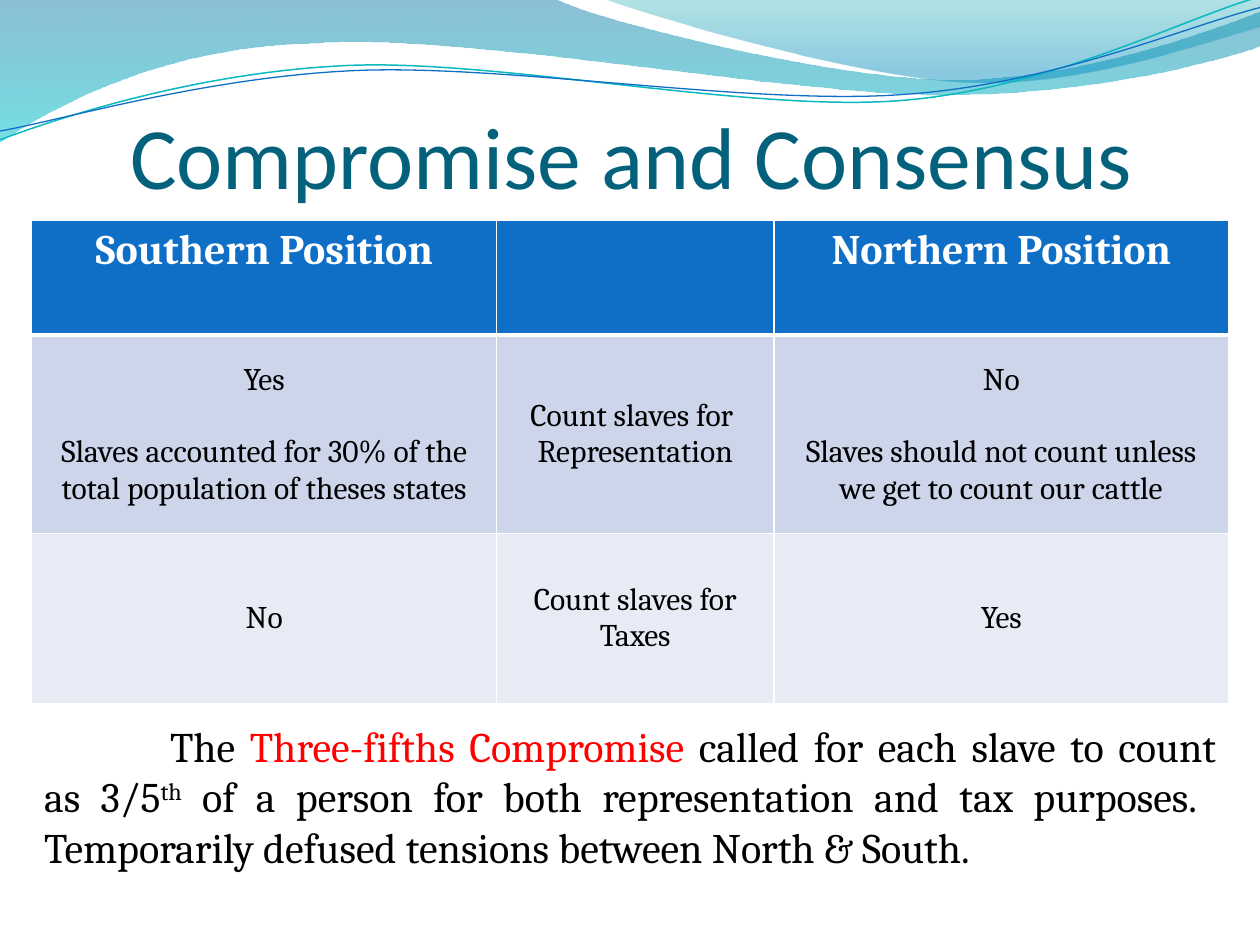
import pptx
import pptx.util
import pptx.dml.color
import pptx.enum.text
from lxml import etree
from pptx.oxml.ns import qn

Cm, Pt = pptx.util.Cm, pptx.util.Pt
ALIGN, ANCHOR = pptx.enum.text.PP_ALIGN, pptx.enum.text.MSO_ANCHOR
COLORS = {
    "title": "04617B", "header": "0F6FC6", "band1": "CCD5EA", "band2": "E7EBF5",
    "white": "FFFFFF", "text": "000000", "accent": "FF0000", "teal": "0AB8BF",
    "deep": "0074A1", "aqua": "00C6CF", "sea": "00A1A9", "sky": "008BBF",
}
UNIT = Cm(0.0254)
BACK_WAVE = [
    (0, 0), (440, -1), (476, 17, 664, 63, 758, 63), (853, 63, 958, 26, 1000, 9),
    (1001, 36), (983, 44, 870, 76, 746, 75), (622, 75, 382, 28, 257, 34),
    (129, 36, 46, 83, -1, 113), (0, 0),
]
FRONT_WAVE = [
    (479, -1), (509, 11, 682, 62, 769, 65), (856, 69, 961, 32, 1000, 21),
    (1000, 0), (479, -1),
]
TEAL_LINE = [
    (0, 111), (48, 93, 158, 57, 277, 52), (395, 47, 593, 89, 713, 80),
    (833, 71, 938, 15, 998, -2),
]
BLUE_LINE = [
    (0, 104), (47, 96, 164, 61, 283, 56), (403, 51, 597, 84, 717, 75),
    (836, 67, 941, 21, 1000, 6),
]
ROWS = [
    [["Southern Position"], [], ["Northern Position"]],
    [["Yes", "Slaves accounted for 30% of the total population of theses states"],
     ["Count slaves for  Representation"],
     ["No", "Slaves should not count unless we get to count our cattle"]],
    [["No"], ["Count slaves for Taxes"], ["Yes"]],
]
SUMMARY = [
    ("\tThe ", "text", 0), ("Three-fifths Compromise ", "accent", 0),
    ("called for each slave to count as 3/5", "text", 0), ("th", "text", 30000),
    (" of a person for both representation and tax purposes.  "
     "Temporarily defused tensions between North & South.", "text", 0),
]


def rgb(name):
    """Return the named colour."""
    return pptx.dml.color.RGBColor.from_string(COLORS[name])


def set_font(font, name, size, color, bold=False):
    """Set the face, size, colour and weight of a font."""
    font.name, font.size, font.bold = name, Pt(size), bold
    font.color.rgb = rgb(color)


def add_outline(s, left, top, segments, close):
    """Add a freeform of lines and cubic curves, measured from left and top."""
    points = [(seg[i] * UNIT, seg[i + 1] * UNIT)
              for seg in segments for i in range(0, len(seg), 2)]
    fb = s.shapes.build_freeform(*points[0], scale=1.0)
    fb.add_line_segments(points[1:], close=close)
    sp = fb.convert_to_shape(left, top)
    sp.shadow.inherit = False
    lines = iter(list(sp._element.iter(qn("a:lnTo"))))
    for seg in segments[1:]:
        line = next(lines)
        if len(seg) == 6:
            curve = etree.Element(qn("a:cubicBezTo"))
            line.addprevious(curve)
            for part in (line, next(lines), next(lines)):
                curve.append(part[0])
                part.getparent().remove(part)
    return sp


def add_wave(s, left, top, segments, stops):
    """Add a wave with a vertical, partly transparent gradient."""
    sp = add_outline(s, left, top, segments, True)
    sp.line.fill.background()
    sp.fill.gradient()
    sp.fill.gradient_angle = 270
    for stop, (position, color, alpha) in zip(sp.fill.gradient_stops, stops):
        stop.position = position
        stop.color.rgb = rgb(color)
    for clr, (_, _, alpha) in zip(sp._element.spPr.iter(qn("a:srgbClr")), stops):
        etree.SubElement(clr, qn("a:alpha")).set("val", str(alpha * 1000))


def add_header_art(s, left, top):
    """Draw the two waves and two thin lines along the top."""
    add_wave(s, left, top, BACK_WAVE, [(0, "deep", 45), (1, "aqua", 55)])
    add_wave(s, left, top, FRONT_WAVE, [(0, "sea", 30), (0.8, "sky", 45)])
    for segments, color, width in ((TEAL_LINE, "teal", 0.85), (BLUE_LINE, "header", 0.75)):
        sp = add_outline(s, left, top, segments, False)
        sp.fill.background()
        sp.line.color.rgb = rgb(color)
        sp.line.width = Pt(width)


def add_title(s, left, top, width, height):
    """Add the centred title, resting on the bottom of its box."""
    tf = s.shapes.add_textbox(left, top, width, height).text_frame
    tf.word_wrap = True
    tf.vertical_anchor = ANCHOR.BOTTOM
    tf.margin_left = tf.margin_right = tf.margin_bottom = 0
    p = tf.paragraphs[0]
    p.text = "Compromise and Consensus"
    p.alignment = ALIGN.CENTER
    set_font(p.font, "Calibri", 50, "title")


def set_borders(cell, **widths):
    """Give a cell white borders of the widths named by side."""
    tc_pr = cell._tc.get_or_add_tcPr()
    for i, side in enumerate("LRTB"):
        ln = etree.Element(qn("a:ln" + side), w=str(Pt(widths.get(side, 1))))
        fill = etree.SubElement(ln, qn("a:solidFill"))
        etree.SubElement(fill, qn("a:srgbClr")).set("val", COLORS["white"])
        tc_pr.insert(i, ln)


def add_positions(s, left, top, width, height):
    """Add the table that sets the two positions side by side."""
    table = s.shapes.add_table(3, 3, left, top, width, height).table
    table.horz_banding = False
    for column, share in zip(table.columns, (3.69, 2.2, 3.61)):
        column.width = int(width * share / 9.5)
    for row, share in zip(table.rows, (0.91, 1.58, 1.35)):
        row.height = int(height * share / 3.84)
    for i, fill in enumerate(("header", "band1", "band2")):
        for cell, lines in zip(table.rows[i].cells, ROWS[i]):
            cell.fill.solid()
            cell.fill.fore_color.rgb = rgb(fill)
            cell.vertical_anchor = ANCHOR.MIDDLE if i else ANCHOR.TOP
            set_borders(cell, T=3 if i == 1 else 1, B=1 if i else 3)
            tf = cell.text_frame
            for j, line in enumerate(lines):
                p = tf.add_paragraph() if j else tf.paragraphs[0]
                p.text = line
                p.alignment = ALIGN.CENTER
                p.space_before = Pt(20.8 * j)
                set_font(p.font, "Cambria", 18 if i else 24, "text" if i else "white", i == 0)


def add_summary(s, left, top, width, height):
    """Add the justified paragraph on the compromise."""
    tf = s.shapes.add_textbox(left, top, width, height).text_frame
    tf.word_wrap = True
    p = tf.paragraphs[0]
    p.alignment = ALIGN.JUSTIFY
    p.font.name, p.font.size = "Cambria", Pt(24)
    tabs = etree.Element(qn("a:tabLst"))
    etree.SubElement(tabs, qn("a:tab"), pos=str(Cm(2.54)), algn="l")
    p._p.get_or_add_pPr().insert(0, tabs)
    for text, color, baseline in SUMMARY:
        r = p.add_run()
        r.text = text
        r.font.color.rgb = rgb(color)
        if baseline:
            r._r.get_or_add_rPr().set("baseline", str(baseline))


def main():
    """Build and save the slide."""
    prs = pptx.Presentation()
    prs.slide_width, prs.slide_height = Cm(25.4), Cm(19.05)
    s = prs.slides.add_slide(prs.slide_layouts[6])
    add_header_art(s, 0, 0)
    add_title(s, Cm(1.3), Cm(1.48), Cm(22.86), Cm(2.69))
    add_positions(s, Cm(0.64), Cm(4.45), Cm(24.13), Cm(9.73))
    add_summary(s, Cm(0.64), Cm(14.4), Cm(24.13), Cm(4.37))
    prs.save("out.pptx")


if __name__ == "__main__":
    main()
